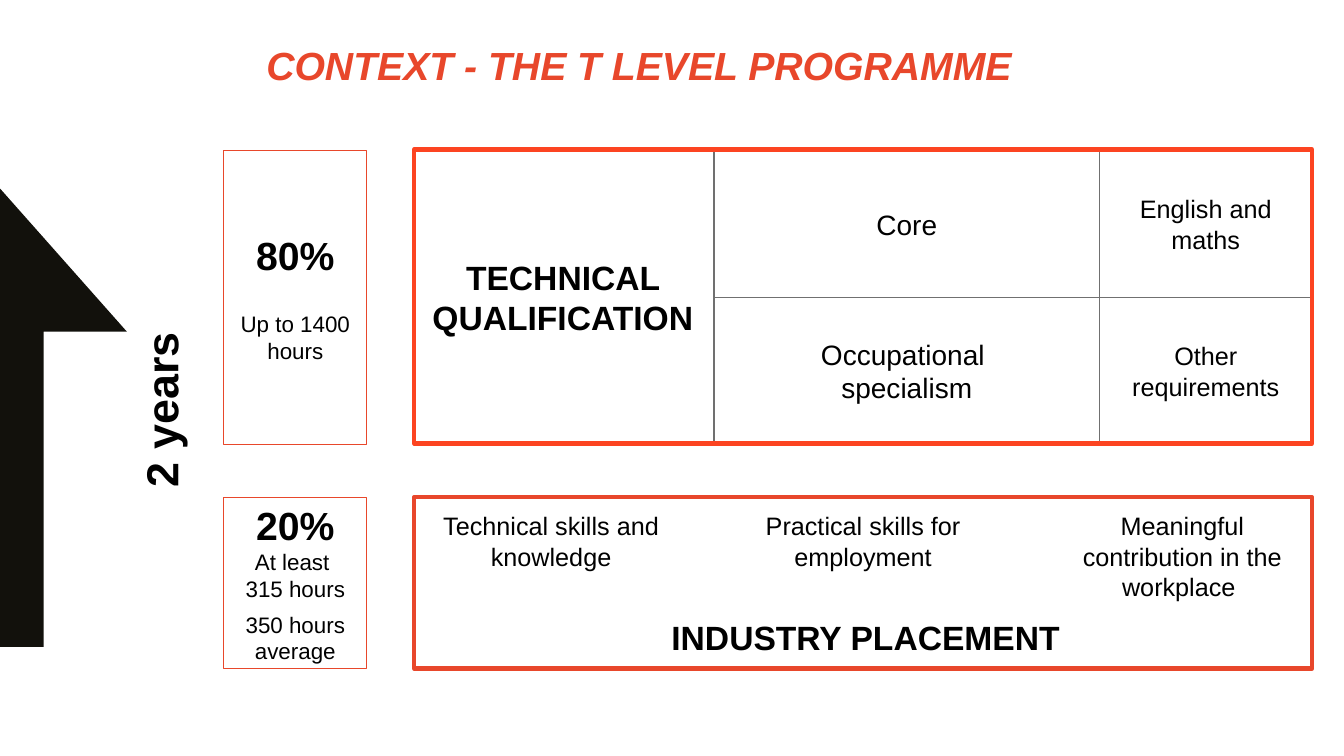
from pptx import Presentation
from pptx.dml.color import RGBColor
from pptx.enum.shapes import MSO_SHAPE
from pptx.enum.text import MSO_ANCHOR, MSO_AUTO_SIZE, PP_ALIGN
from pptx.util import Inches, Pt

RECTANGLE = MSO_SHAPE.RECTANGLE
TOP, MIDDLE = MSO_ANCHOR.TOP, MSO_ANCHOR.MIDDLE
LEFT, CENTER = PP_ALIGN.LEFT, PP_ALIGN.CENTER
NO_AUTOFIT = MSO_AUTO_SIZE.NONE

BLACK = RGBColor(0x00, 0x00, 0x00)
WHITE = RGBColor(0xFF, 0xFF, 0xFF)
INK = RGBColor(0x12, 0x11, 0x0C)
GREY = RGBColor(0x70, 0x70, 0x70)
ORANGE = RGBColor(0xE8, 0x47, 0x2B)
BRIGHT_ORANGE = RGBColor(0xFC, 0x44, 0x21)

# The slide is a grid of 160 columns by 90 rows
COLUMNS, ROWS = 160, 90


def write(frame, text, size=18, bold=False, italic=False, color=BLACK,
          font="Arial", align=CENTER, before=0, after=0, spacing=1.0):
    """Add one paragraph, using the empty first one if there is one."""
    first = frame.paragraphs[0]
    paragraph = frame.add_paragraph() if first.runs else first
    paragraph.alignment = align
    paragraph.space_before, paragraph.space_after = Pt(before), Pt(after)
    paragraph.line_spacing = spacing
    run = paragraph.add_run()
    run.text = text
    run.font.name, run.font.size = font, Pt(size)
    run.font.bold, run.font.italic = bold, italic
    run.font.color.rgb = color


class GridSlide:
    def __init__(self, deck):
        self.slide = deck.slides.add_slide(deck.slide_layouts[5])
        self.shapes = self.slide.shapes
        self.column = deck.slide_width / COLUMNS
        self.row = deck.slide_height / ROWS

    def place(self, left, top, width, height):
        return (round(left * self.column), round(top * self.row),
                round(width * self.column), round(height * self.row))

    def title(self, text, area):
        title = self.shapes.title
        title.left, title.top, title.width, title.height = self.place(*area)
        frame = title.text_frame
        frame.auto_size, frame.vertical_anchor = NO_AUTOFIT, TOP
        frame.margin_left = frame.margin_right = 0
        frame.margin_top = frame.margin_bottom = 0
        write(frame, text, size=28, bold=True, italic=True, color=ORANGE,
              align=LEFT, spacing=0.8)

    def box(self, area, line=None, weight=0.75, fill=None):
        box = self.shapes.add_shape(RECTANGLE, *self.place(*area))
        box.shadow.inherit = False
        if fill is None:
            box.fill.background()
        else:
            box.fill.solid()
            box.fill.fore_color.rgb = fill
        if line is None:
            box.line.fill.background()
        else:
            box.line.color.rgb = line
            box.line.width = Pt(weight)
        box.text_frame.word_wrap = True
        box.text_frame.vertical_anchor = MIDDLE
        return box.text_frame

    def label(self, text, area, anchor=TOP, rotation=0, **style):
        label = self.shapes.add_textbox(*self.place(*area))
        label.rotation = rotation
        label.text_frame.word_wrap = True
        label.text_frame.vertical_anchor = anchor
        write(label.text_frame, text, **style)

    def outline(self, points, fill):
        corners = [self.place(x, y, 0, 0)[:2] for x, y in points]
        builder = self.shapes.build_freeform(*corners[0], scale=1.0)
        builder.add_line_segments(corners[1:], close=True)
        outline = builder.convert_to_shape()
        outline.shadow.inherit = False
        outline.fill.solid()
        outline.fill.fore_color.rgb = fill
        outline.line.fill.background()


def main():
    deck = Presentation()
    deck.slide_width, deck.slide_height = Inches(13.33), Inches(7.5)
    page = GridSlide(deck)

    share_left, share_width = 26.64, 17.04
    programme_left, core_left, other_left, programme_right = 49.3, 85, 130.9, 156.2
    programme_width = programme_right - programme_left
    study_top, study_row = 17.9, 17.5
    study_height = 2 * study_row
    placement_top, placement_height = 59.2, 20.4

    # Title and upward arrow
    page.title("CONTEXT - THE T LEVEL PROGRAMME", (31.7, 6, 128.3, 6.6))
    page.outline([(0, 22.44), (15.1, 39.48), (5.2, 39.48), (5.2, 77), (0, 77)], INK)
    page.label("2 years", (-11.76, 45.96, 61.7, 5.64), anchor=MIDDLE,
               rotation=270, size=32, bold=True)

    # Shares of the time
    study_share = page.box((share_left, study_top, share_width, study_height), ORANGE)
    write(study_share, "80%", size=28, bold=True)
    write(study_share, "Up to 1400 hours", size=16, before=23)

    placement_share = page.box(
        (share_left, placement_top, share_width, placement_height), ORANGE)
    write(placement_share, "20%", size=28, bold=True)
    write(placement_share, "At least ", size=16)
    write(placement_share, "315 hours", size=16, after=6)
    write(placement_share, "350 hours average", size=16)

    # Technical qualification and its parts
    page.label("TECHNICAL QUALIFICATION",
               (programme_left, study_top, 35.4, study_height),
               anchor=MIDDLE, size=24, bold=True)
    study_parts = [
        (core_left, other_left, 20, [["Core"], ["Occupational ", "specialism"]]),
        (other_left, programme_right, 18,
         [["English and maths"], ["Other requirements"]]),
    ]
    for left, right, size, parts in study_parts:
        for index, lines in enumerate(parts):
            part = page.box((left, study_top + index * study_row,
                             right - left, study_row), GREY)
            for line in lines:
                write(part, line, size=size)

    # Industry placement and its aims
    placement = page.box((programme_left + 0.3, 71.8, programme_width, 8.2), fill=WHITE)
    write(placement, "INDUSTRY PLACEMENT", size=24, bold=True)
    aims = [
        ("Technical skills and knowledge", programme_left, 32.6),
        ("Practical skills for employment", 86.2, 33.1),
        ("Meaningful contribution in the workplace ", 125.3, 30.9),
    ]
    for aim, left, width in aims:
        page.label(aim, (left, 60.2, width, 10))

    # Heavy frames around both halves of the programme
    for top, height, color in [(study_top - 0.1, study_height, BRIGHT_ORANGE),
                               (placement_top, placement_height, ORANGE)]:
        page.box((programme_left, top, programme_width, height), color, weight=3)

    deck.save("out.pptx")


if __name__ == "__main__":
    main()
